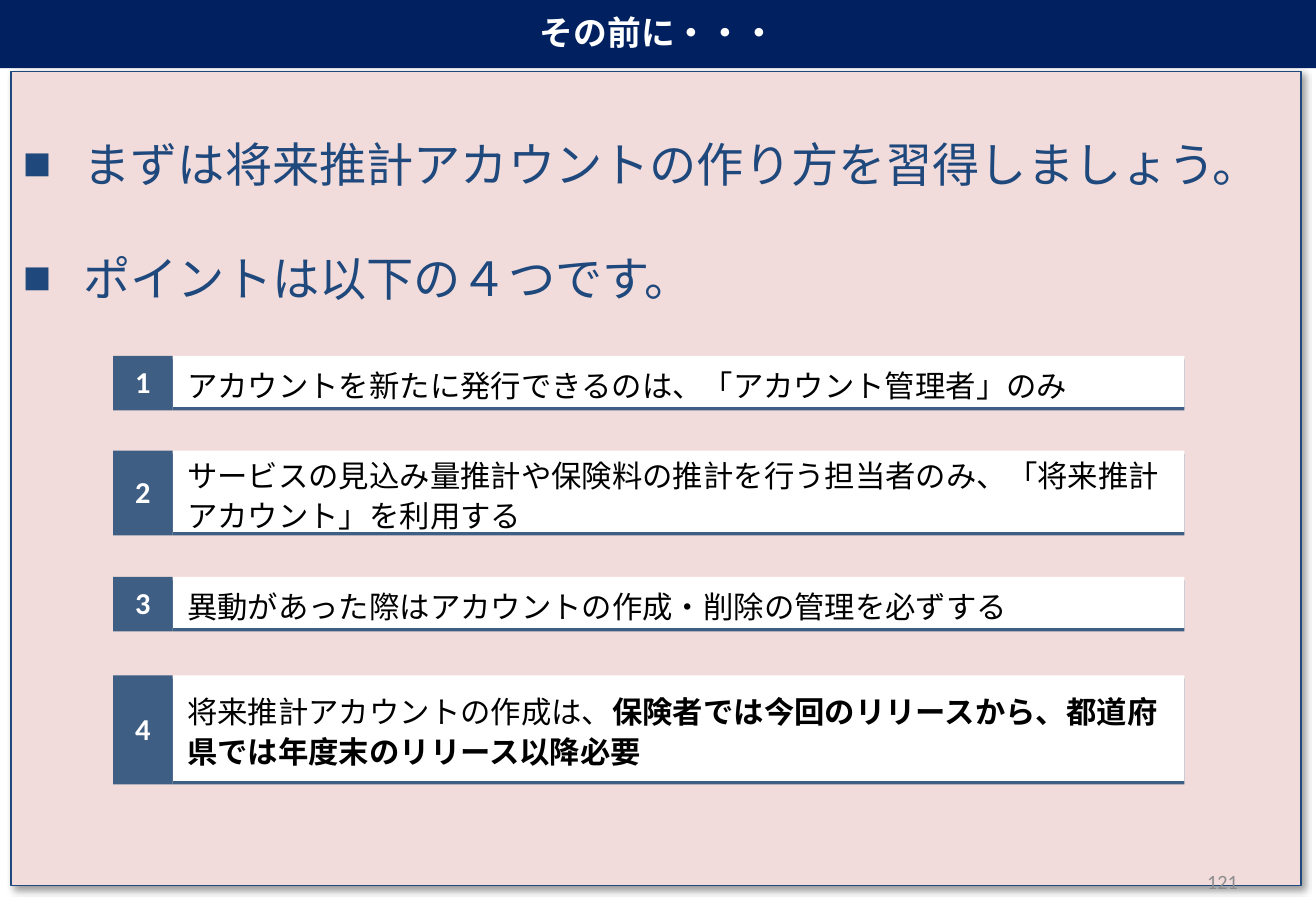
import pptx
import pptx.dml.color
import pptx.enum.shapes
import pptx.enum.text
import pptx.oxml
import pptx.oxml.ns
import pptx.util
from lxml import etree

Pt = pptx.util.Pt
RGBColor = pptx.dml.color.RGBColor
ALIGN = pptx.enum.text.PP_ALIGN
ANCHOR = pptx.enum.text.MSO_ANCHOR
qn = pptx.oxml.ns.qn

# Content
HEADING = "その前に・・・"
MESSAGES = [
    "まずは将来推計アカウントの作り方を習得しましょう。",
    "ポイントは以下の４つです。",
]
# top, height, runs of (text, bold)
POINTS = [
    (211, 30.24, [("アカウントを新たに発行できるのは、「アカウント管理者」のみ", False)]),
    (267.1, 48.24, [("サービスの見込み量推計や保険料の推計を行う担当者のみ、「将来推計アカウント」を利用する", False)]),
    (342, 30.24, [("異動があった際はアカウントの作成・削除の管理を必ずする", False)]),
    (400.3, 62.64, [("将来推計アカウントの作成は、", False),
                    ("保険者では今回のリリースから、都道府県では年度末のリリース以降必要", True)]),
]
PAGE = "121"

# Colours
NAVY = RGBColor(0x00, 0x20, 0x60)
PINK = RGBColor(0xF2, 0xDC, 0xDB)
BLUE = RGBColor(0x1F, 0x49, 0x7D)
STEEL = RGBColor(0x3E, 0x5E, 0x84)
GREY = RGBColor(0x8C, 0x8C, 0x8C)
WHITE = RGBColor(0xFF, 0xFF, 0xFF)
BLACK = RGBColor(0x00, 0x00, 0x00)

# Layout
SLIDE_W, SLIDE_H = 780, 540
NUMBER_LEFT, NUMBER_W, POINT_W = 67, 35.28, 599.76
MESSAGE_INDENT, MESSAGE_GAP = 36, 34

# Shadows: colour, opacity %, blur, distance, angle
PANEL_SHADOW = (BLACK, 40, 4, 3, 45)
POINT_SHADOW = (STEEL, 100, 0, 2, 90)

presentation = pptx.Presentation()
presentation.slide_width, presentation.slide_height = Pt(SLIDE_W), Pt(SLIDE_H)
slide = presentation.slides.add_slide(presentation.slide_layouts[6])


def set_all(target, values):
    for name, value in values.items():
        setattr(target, name, value)


def frame_text(shape, anchor, insets):
    left, top, right, bottom = insets
    set_all(shape.text_frame, {
        "word_wrap": True, "vertical_anchor": anchor,
        "margin_left": Pt(left), "margin_top": Pt(top),
        "margin_right": Pt(right), "margin_bottom": Pt(bottom)})
    return shape.text_frame


def add_box(left, top, width, height, fill, outline=None, shadow=None):
    box = slide.shapes.add_shape(pptx.enum.shapes.MSO_SHAPE.RECTANGLE,
                                 Pt(left), Pt(top), Pt(width), Pt(height))
    box.fill.solid()
    box.fill.fore_color.rgb = fill
    if outline:
        box.line.color.rgb = outline
        box.line.width = Pt(0.75)
    else:
        box.line.fill.background()
    box.shadow.inherit = False
    if shadow:
        colour, opacity, blur, distance, angle = shadow
        effects = box.element.spPr.find(qn("a:effectLst"))
        outer = etree.SubElement(effects, qn("a:outerShdw"), {
            "blurRad": str(Pt(blur)), "dist": str(Pt(distance)),
            "dir": str(angle * 60000), "algn": "tl", "rotWithShape": "0"})
        tint = etree.SubElement(outer, qn("a:srgbClr"), val=str(colour))
        etree.SubElement(tint, qn("a:alpha"), val=str(opacity * 1000))
    return box


def write(paragraph, runs, size, font, colour, align=ALIGN.LEFT):
    paragraph.alignment = align
    for text, bold in runs:
        run = paragraph.add_run()
        run.text = text
        set_all(run.font, {"size": Pt(size), "name": font, "bold": bold})
        run.font.color.rgb = colour


# Heading band
band = add_box(0, -2.16, SLIDE_W, 42.48, NAVY)
write(frame_text(band, ANCHOR.MIDDLE, (7.2, 3.6, 7.2, 3.6)).paragraphs[0],
      [(HEADING, True)], 20, "Noto Sans CJK JP", WHITE, ALIGN.CENTER)

# Panel with bulleted messages
panel = add_box(6.48, 42.48, 764.64, 482.4, PINK, BLUE, PANEL_SHADOW)
panel_text = frame_text(panel, ANCHOR.TOP, (7.2, 3.6 + MESSAGE_GAP, 7.2, 3.6))
for index, message in enumerate(MESSAGES):
    paragraph = panel_text.add_paragraph() if index else panel_text.paragraphs[0]
    properties = paragraph._p.get_or_add_pPr()
    properties.set("marL", str(Pt(MESSAGE_INDENT)))
    properties.set("indent", str(-Pt(MESSAGE_INDENT)))
    etree.SubElement(properties, qn("a:buFont"), typeface="Arial")
    etree.SubElement(properties, qn("a:buChar"), char="■")
    if index:
        paragraph.space_before = Pt(MESSAGE_GAP)
    write(paragraph, [(message, False)], 28, "Arial", BLUE)

# Page number
page = slide.shapes.add_textbox(Pt(558.72), Pt(508.32), Pt(182.16), Pt(28.8))
write(frame_text(page, ANCHOR.MIDDLE, (7.2, 3.6, 7.2, 3.6)).paragraphs[0],
      [(PAGE, False)], 12, "Calibri", GREY, ALIGN.RIGHT)

# Numbered points
for number, (top, height, runs) in enumerate(POINTS, 1):
    point = add_box(NUMBER_LEFT + NUMBER_W, top, POINT_W, height, WHITE, shadow=POINT_SHADOW)
    line = frame_text(point, ANCHOR.MIDDLE, (8.64, 2.16, 8.64, 0)).paragraphs[0]
    line.line_spacing = 1.1
    write(line, runs, 18, "Calibri", BLACK)
    badge = add_box(NUMBER_LEFT, top, NUMBER_W, height, STEEL, shadow=POINT_SHADOW)
    write(frame_text(badge, ANCHOR.MIDDLE, (0, 0, 0, 0)).paragraphs[0],
          [(str(number), True)], 18, "Calibri", WHITE, ALIGN.CENTER)

presentation.save("out.pptx")
